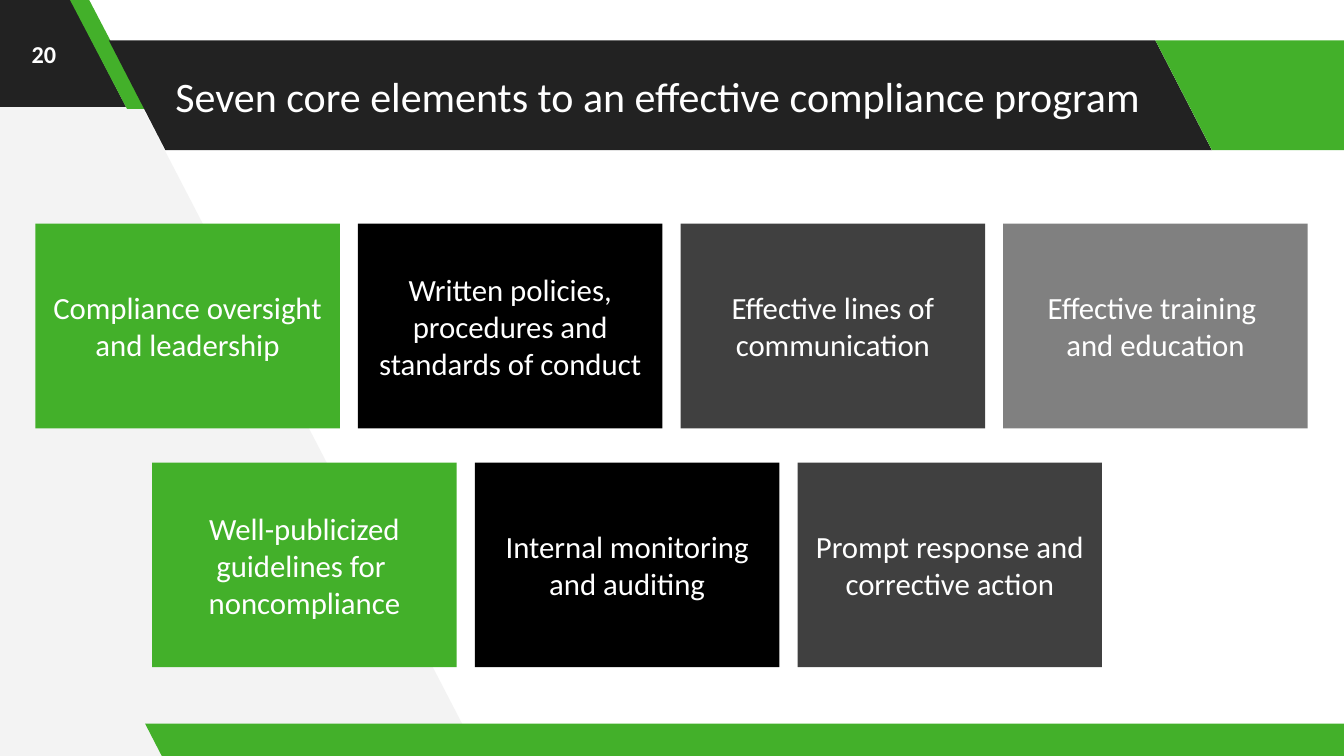
from pptx import Presentation
from pptx import util as u
from pptx.dml import color
from pptx.enum import shapes, text

PX = u.Inches(1) // 100
FONT = "Calibri"
WHITE, BLACK, GREEN = "FFFFFF", "000000", "43B02A"
CHARCOAL, DARK_GRAY, MID_GRAY, PALE_GRAY = "222222", "404040", "808080", "F3F3F3"

CARD_WIDTH, CARD_HEIGHT, CARD_PITCH = 302, 203, 320
CARD_ROWS = [
    (35, 222, [
        ("Compliance oversight and leadership", GREEN),
        ("Written policies, procedures and standards of conduct", BLACK),
        ("Effective lines of communication", DARK_GRAY),
        ("Effective training \vand education", MID_GRAY),
    ]),
    (151, 459, [
        ("Well-publicized guidelines for \vnoncompliance", GREEN),
        ("Internal monitoring and auditing", BLACK),
        ("Prompt response and corrective action", DARK_GRAY),
    ]),
]
BANDS = [
    (-132, -3, 257, 109, 0.515, CHARCOAL),
    (69, -1, 76, 109, 0.75, GREEN),
    (108, 40, 1094, 109, 0.515, CHARCOAL),
    (1146, 40, 257, 109, 0.515, GREEN),
    (144, 718, 1220, 33, 0.515, GREEN),
]
WEDGE = [(475, 750), (83, -6), (-8, -5), (-3, 755)]


def px(*lengths):
    return [length * PX for length in lengths]


def rgb(hex_color):
    return color.RGBColor.from_string(hex_color)


def paint(shape, hex_color):
    shape.shadow.inherit = False
    shape.fill.solid()
    shape.fill.fore_color.rgb = rgb(hex_color)
    shape.line.fill.background()


def write(shape, wording, size, align=text.PP_ALIGN.CENTER, bold=False):
    frame = shape.text_frame
    frame.text = wording
    frame.word_wrap = True
    frame.vertical_anchor = text.MSO_ANCHOR.MIDDLE
    frame.margin_left = frame.margin_right = 13 * PX
    frame.margin_top = frame.margin_bottom = 13 * PX
    for paragraph in frame.paragraphs:
        paragraph.alignment = align
        for run in paragraph.runs:
            run.font.name = FONT
            run.font.size = u.Pt(size)
            run.font.bold = bold
            run.font.color.rgb = rgb(WHITE)


def add_wedge(slide):
    outline = slide.shapes.build_freeform(*WEDGE[0], scale=PX)
    outline.add_line_segments(WEDGE[1:], close=True)
    paint(outline.convert_to_shape(), PALE_GRAY)


def add_band(slide, left, top, width, height, slant, fill):
    band = slide.shapes.add_shape(
        shapes.MSO_SHAPE.PARALLELOGRAM, *px(left, top, width, height))
    band.adjustments[0] = slant
    band.element.spPr.xfrm.set("flipH", "1")
    paint(band, fill)


def add_label(slide, box, wording, size, **style):
    write(slide.shapes.add_textbox(*px(*box)), wording, size, **style)


def add_card(slide, left, top, wording, fill):
    card = slide.shapes.add_shape(
        shapes.MSO_SHAPE.RECTANGLE, *px(left, top, CARD_WIDTH, CARD_HEIGHT))
    paint(card, fill)
    write(card, wording, 22)


def main():
    deck = Presentation()
    deck.slide_width, deck.slide_height = u.Inches(13.33), u.Inches(7.5)
    slide = deck.slides.add_slide(deck.slide_layouts[6])

    add_wedge(slide)
    for band in BANDS:
        add_band(slide, *band)
    add_label(slide, (161, 40, 1172, 109),
              "Seven core elements to an effective compliance program",
              30, align=text.PP_ALIGN.LEFT)
    add_label(slide, (0, 0, 87, 107), "20", 17.3, bold=True)
    for row_left, top, cards in CARD_ROWS:
        for column, (wording, fill) in enumerate(cards):
            add_card(slide, row_left + column * CARD_PITCH, top, wording, fill)

    deck.save("out.pptx")


if __name__ == "__main__":
    main()
